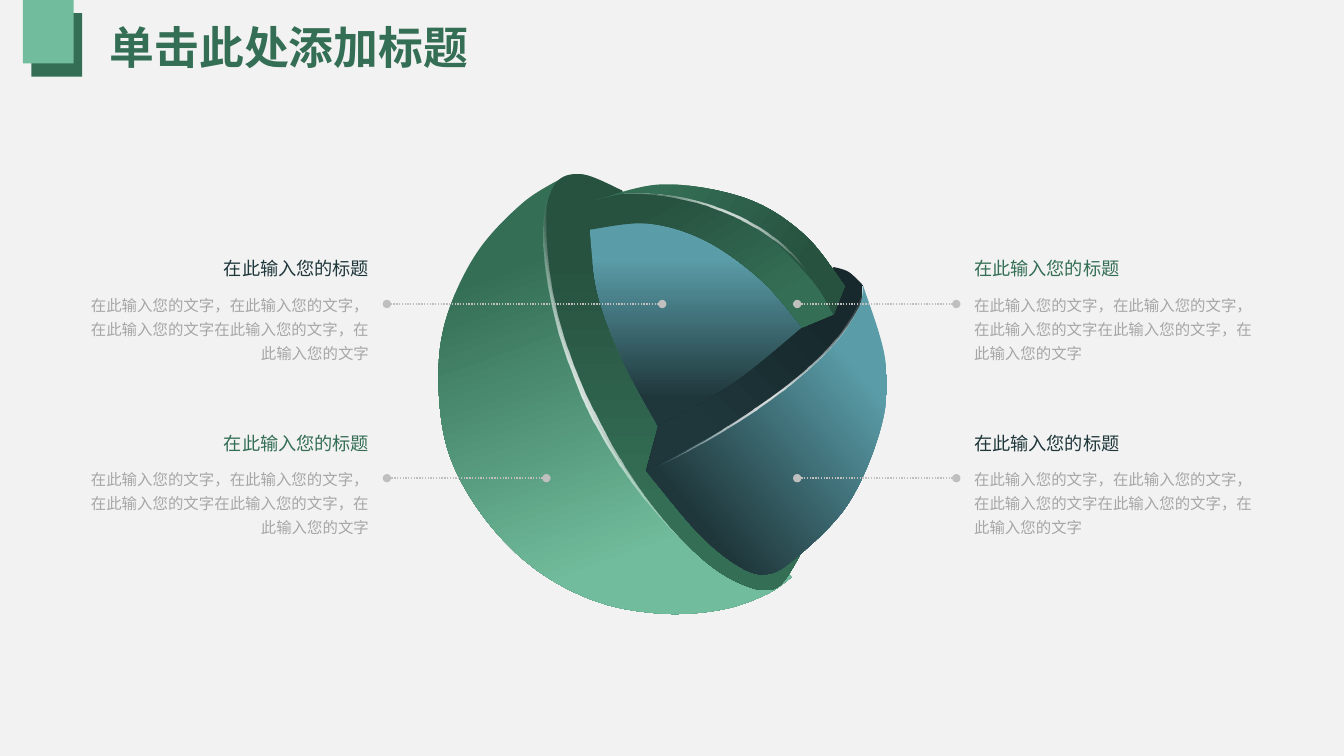
import math
from dataclasses import dataclass

import pptx
import pptx.dml.color
import pptx.enum.dml
import pptx.enum.shapes
import pptx.enum.text
import pptx.oxml
import pptx.oxml.ns
import pptx.util
from lxml import etree

Cm = pptx.util.Cm
qn = pptx.oxml.ns.qn
NS = 'xmlns:a="http://schemas.openxmlformats.org/drawingml/2006/main"'


@dataclass(frozen=True)
class Theme:
    font: str = "Noto Sans CJK SC"
    back: str = "F2F2F2"
    green: str = "346E55"
    mint: str = "71BC9C"
    forest: str = "275240"
    teal: str = "5A9DA8"
    slate: str = "1F373B"
    night: str = "17292C"
    shine: str = "FFFFFF"
    grey: str = "A6A6A6"
    line: str = "BFBFBF"
    title: int = 32
    heading: int = 13
    body: int = 11


T = Theme()
HEADING = "在此输入您的标题"
BODY = "在此输入您的文字，在此输入您的文字，在此输入您的文字在此输入您的文字，在此输入您的文字"

# Globe outlines on a grid of hundredths: corner and size of the grid
GRID = (435, 173, 444, 437)

# Edges shared by two neighbouring pieces
RIGHT_EDGE = [(856, 283), (851, 307), (819, 350), (752, 405), (641, 467)]
RIM_EDGE = [(590, 199), (627, 192), (687, 199), (756, 230), (805, 277), (827, 312)]

# Each piece: first colour, last colour, clockwise angle, smooth runs with corners between
PIECES = [
    # Left half of the shell and its cut face
    (T.green, T.mint, 70, [[
        (559, 176), (518, 202), (473, 251), (443, 315), (435, 378), (445, 449), (479, 512),
        (530, 564), (592, 597), (657, 609), (716, 605), (760, 590), (785, 573)]]),
    (T.forest, T.green, 90, [[
        (617, 189), (577, 173), (550, 184), (540, 233), (555, 322), (588, 411), (643, 496),
        (696, 554), (739, 581), (771, 583), (795, 549)]]),
    # Core
    (T.teal, T.slate, 90, [
        [(585, 228), (593, 291), (618, 358), (653, 423)], [(661, 441), (796, 369)],
        [(824, 322), (790, 286), (698, 221), (613, 210)]]),
    # Right half of the shell and its cut face
    (T.teal, T.slate, 140, [
        RIGHT_EDGE, [(641, 467), (690, 526), (727, 558), (758, 570), (789, 554), (842, 499),
                     (875, 420), (878, 356), (856, 283)]]),
    (T.night, T.slate, 135, [
        RIGHT_EDGE, [(653, 423), (727, 381), (796, 325)], [(827, 265), (842, 270), (856, 283)]]),
    # Upper rim, cut face and outside
    (T.forest, T.green, 60, [
        RIM_EDGE, [(796, 325), (755, 278), (700, 239), (643, 222), (585, 228)], [(572, 208)]]),
    (T.green, T.forest, 30, [
        RIM_EDGE, [(838, 284), (798, 233), (740, 197), (658, 183), (590, 199)]]),
]

# Each shine: centre, turn, then two middles and two tips, each followed by a curve handle
SHINES = [
    ((599.5, 380), 335.9,
     [(581, 390), (529, 277), (544, 193), (521, 260), (577, 393), (622, 494), (692, 550),
      (633, 504)]),
    ((757.5, 385.5), 230.4,
     [(781, 382), (710, 436), (642, 467), (714, 437), (783, 383), (861, 321), (857, 285),
      (852, 328)]),
    ((718, 227), 124.8,
     [(728, 215), (780, 239), (800, 271), (783, 237), (729, 213), (675, 188), (629, 192),
      (676, 191)]),
]


def rgb(color):
    return pptx.dml.color.RGBColor.from_string(color)


def add_text(p, text, *, size, color, bold=False, align="LEFT", spacing=1.0, after=0):
    p.alignment = getattr(pptx.enum.text.PP_ALIGN, align)
    p.line_spacing, p.space_after = spacing, pptx.util.Pt(after)
    r = p.add_run()
    r.text = text
    r.font.name, r.font.size, r.font.bold = T.font, pptx.util.Pt(size), bold
    r.font.color.rgb = rgb(color)
    etree.SubElement(r.font._element, qn("a:ea"), typeface=T.font)


def add_outline(s, points):
    points = [(round(x), round(y)) for x, y in points]
    builder = s.shapes.build_freeform(*points[0], scale=1)
    builder.add_line_segments(points[1:], close=True)
    sp = builder.convert_to_shape()
    sp.shadow.inherit = False
    sp.line.fill.background()
    return sp


def set_gradient(sp, colors, angle, stops):
    sp.fill.gradient()
    sp.fill.gradient_angle = (360 - angle) % 360
    for stop, color, position in zip(sp.fill.gradient_stops, colors, stops):
        stop.color.rgb, stop.position = rgb(color), position


def bezier(knots, steps=12):
    points = []
    for t in (k / steps for k in range(steps + 1)):
        weights = ((1 - t) ** 3, 3 * t * (1 - t) ** 2, 3 * t * t * (1 - t), t ** 3)
        points.append(tuple(sum(w * k[axis] for w, k in zip(weights, knots))
                            for axis in (0, 1)))
    return points


def smooth_run(run):
    """Curve through every point of the run, with tangents along its neighbours."""
    ends = [run[0], *run, run[-1]]
    points = [run[0]]
    for before, a, b, after in zip(ends, ends[1:], ends[2:], ends[3:]):
        handle_a = tuple(a[i] + (b[i] - before[i]) / 6 for i in (0, 1))
        handle_b = tuple(b[i] - (after[i] - a[i]) / 6 for i in (0, 1))
        points += bezier((a, handle_a, handle_b, b))[1:]
    return points


def shine_points(knots):
    middle_a, h1, tip_a, h2, middle_b, h3, tip_b, h4 = knots
    curves = ((middle_a, h1, tip_a, tip_a), (tip_a, tip_a, h2, middle_b),
              (middle_b, h3, tip_b, tip_b), (tip_b, tip_b, h4, middle_a))
    return [pt for curve in curves for pt in bezier(curve)[:-1]]


def turn_back(points, centre, degrees):
    cos, sin = math.cos(math.radians(degrees)), math.sin(math.radians(degrees))
    offsets = [(x - centre[0], y - centre[1]) for x, y in points]
    return [(centre[0] + x * cos + y * sin, centre[1] - x * sin + y * cos) for x, y in offsets]


def add_globe(s, left, top, width, height):
    def place(points):
        return [(left + (x - GRID[0]) * width / GRID[2],
                 top + (y - GRID[1]) * height / GRID[3]) for x, y in points]

    for first, last, angle, runs in PIECES:
        outline = [pt for run in runs for pt in smooth_run(run)]
        set_gradient(add_outline(s, place(outline)), (first, last), angle, (0.2, 0.8))

    # Shines fade from the centre outwards
    for centre, turn, knots in SHINES:
        sp = add_outline(s, place(turn_back(shine_points(knots), centre, turn)))
        sp.rotation = turn
        set_gradient(sp, (T.shine, T.shine), 0, (0, 1))
        grad = sp.element.spPr.find(qn("a:gradFill"))
        etree.SubElement(grad.findall(".//" + qn("a:srgbClr"))[1], qn("a:alpha"), val="0")
        grad.replace(grad.find(qn("a:lin")), pptx.oxml.parse_xml(
            f'<a:path {NS} path="circle"><a:fillToRect l="50000" t="50000" r="50000" b="50000"/>'
            '</a:path>'))


def add_header(s, left, top, width, height):
    # Two overlapping tabs
    for x, y, color in ((0.79, 0.33, T.green), (0.58, 0, T.mint)):
        sp = s.shapes.add_shape(pptx.enum.shapes.MSO_SHAPE.RECTANGLE,
                                left + Cm(x), top + Cm(y), Cm(1.28), Cm(1.6))
        sp.shadow.inherit = False
        sp.fill.solid()
        sp.fill.fore_color.rgb = rgb(color)
        sp.line.fill.background()

    title = s.shapes.title
    title.left, title.top = left + Cm(2.51), top + Cm(0.33)
    title.width, title.height = width - Cm(4.65), height - Cm(0.33)
    tf = title.text_frame
    tf.auto_size = pptx.enum.text.MSO_AUTO_SIZE.NONE
    tf.vertical_anchor = pptx.enum.text.MSO_ANCHOR.MIDDLE
    add_text(tf.paragraphs[0], "单击此处添加标题", size=T.title, color=T.green, bold=True,
             spacing=0.9)


def add_callout(s, left, top, width, height, *, tip, color):
    on_left = tip > left
    align = "RIGHT" if on_left else "LEFT"
    tf = s.shapes.add_textbox(left, top, width, height).text_frame
    tf.word_wrap = True
    tf.auto_size = pptx.enum.text.MSO_AUTO_SIZE.SHAPE_TO_FIT_TEXT
    tf.margin_left = tf.margin_right = Cm(0.33)
    tf.margin_top = tf.margin_bottom = Cm(0.18)
    for p, text, size, ink in ((tf.paragraphs[0], HEADING, T.heading, color),
                               (tf.add_paragraph(), BODY, T.body, T.grey)):
        add_text(p, text, size=size, color=ink, align=align, spacing=1.3, after=8)

    # Dotted leader with round ends
    base = left + width + Cm(0.12) if on_left else left - Cm(0.12)
    y = top + Cm(1.51)
    line = s.shapes.add_connector(pptx.enum.shapes.MSO_CONNECTOR.STRAIGHT,
                                  max(tip, base), y, min(tip, base), y)
    line.line.color.rgb, line.line.width = rgb(T.line), pptx.util.Pt(1)
    line.line.dash_style = pptx.enum.dml.MSO_LINE.ROUND_DOT
    ln = line.element.spPr.find(qn("a:ln"))
    for end in ("a:headEnd", "a:tailEnd"):
        etree.SubElement(ln, qn(end), type="oval")
    etree.SubElement(line.element.spPr, qn("a:effectLst"))


def main():
    prs = pptx.Presentation()
    prs.slide_width, prs.slide_height = Cm(33.87), Cm(19.05)
    s = prs.slides.add_slide(prs.slide_layouts[5])
    s.background.fill.solid()
    s.background.fill.fore_color.rgb = rgb(T.back)

    add_header(s, 0, 0, prs.slide_width, Cm(2.18))
    add_globe(s, Cm(11.05), Cm(4.39), Cm(11.28), Cm(11.1))
    for left, top, tip, color in ((1.6, 10.54, 13.77, T.green), (1.6, 6.15, 16.69, T.slate),
                                  (24.22, 10.54, 20.09, T.slate), (24.22, 6.15, 20.09, T.green)):
        add_callout(s, Cm(left), Cm(top), Cm(8.03), Cm(3.18), tip=Cm(tip), color=color)
    prs.save("out.pptx")


if __name__ == "__main__":
    main()
